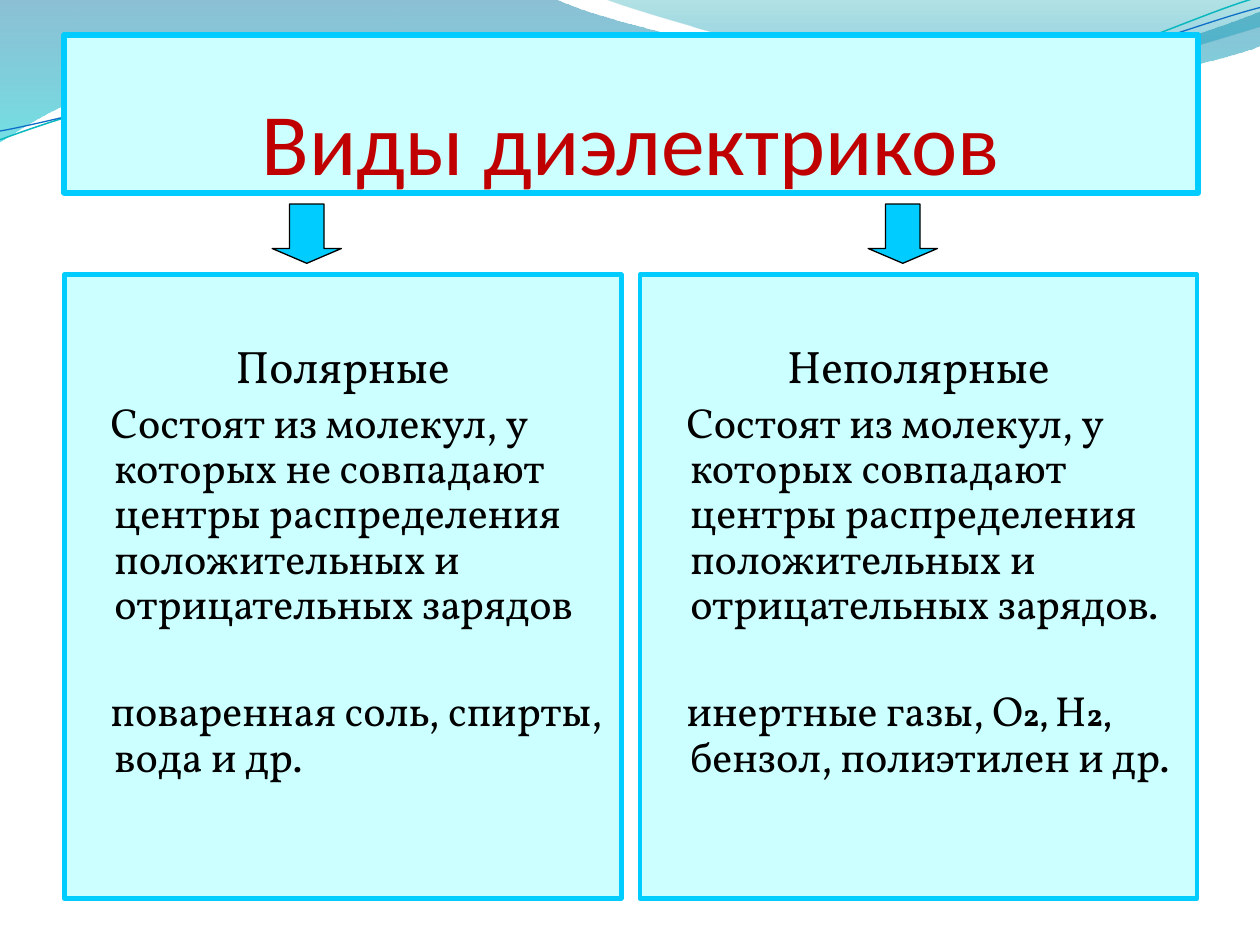
from lxml import etree
from pptx import Presentation
from pptx.dml.color import RGBColor
from pptx.enum import shapes, text
from pptx.oxml.ns import qn
from pptx.util import Inches, Pt


def rgb(value):
    return RGBColor.from_string(value)


def add_text(p, content, size=24, font="Vollkorn", color="000000", bold=False):
    r = p.add_run()
    r.text = content
    r.font.size, r.font.name, r.font.bold = Pt(size), font, bold
    r.font.color.rgb = rgb(color)


prs = Presentation()
prs.slide_width, prs.slide_height = Inches(10), Inches(7.5)
s = prs.slides.add_slide(prs.slide_layouts[6])

# Waves: segments of one point are lines, of three points are Bezier curves
waves = [
    ((0, 0),
     [[(4.4, -0.01)],
      [(4.76, 0.17), (6.64, 0.63), (7.58, 0.63)],
      [(8.53, 0.63), (9.58, 0.26), (10, 0.09)],
      [(10.01, 0.36)],
      [(9.83, 0.44), (8.7, 0.76), (7.46, 0.75)],
      [(6.22, 0.75), (3.82, 0.28), (2.57, 0.34)],
      [(1.29, 0.36), (0.46, 0.83), (-0.01, 1.13)]],
     [(0, "0074A1", 45), (1, "00C6CF", 55)], None),
    ((4.79, -0.01),
     [[(5.09, 0.11), (6.82, 0.62), (7.69, 0.65)],
      [(8.56, 0.69), (9.61, 0.32), (10, 0.21)],
      [(10, 0)]],
     [(0, "00A1A9", 30), (0.8, "008BBF", 45)], None),
    ((0, 1.11),
     [[(0.48, 0.93), (1.58, 0.57), (2.77, 0.52)],
      [(3.95, 0.47), (5.93, 0.89), (7.13, 0.8)],
      [(8.33, 0.71), (9.38, 0.15), (9.98, -0.02)]],
     None, ("0AB8BF", 0.85)),
    ((0, 1.04),
     [[(0.47, 0.96), (1.64, 0.61), (2.83, 0.56)],
      [(4.03, 0.51), (5.97, 0.84), (7.17, 0.75)],
      [(8.36, 0.67), (9.41, 0.21), (10, 0.06)]],
     None, ("0F6FC6", 0.75)),
]
for start, segments, stops, line in waves:
    builder = s.shapes.build_freeform(Inches(start[0]), Inches(start[1]))
    points = [(Inches(x), Inches(y)) for seg in segments for x, y in seg]
    builder.add_line_segments(points, close=stops is not None)
    sp = builder.convert_to_shape()
    sp.shadow.inherit = False
    # Join each three points of a curved segment into one Bezier curve
    steps = iter(list(sp.element.spPr.iter(qn("a:lnTo"))))
    for seg in segments:
        curve, *others = [next(steps) for _ in seg]
        if others:
            curve.tag = qn("a:cubicBezTo")
            for step in others:
                curve.append(step[0])
                step.getparent().remove(step)
    if stops:
        sp.line.fill.background()
        sp.fill.gradient()
        sp.fill.gradient_angle = 270
        elements = sp.element.spPr.iter(qn("a:gs"))
        for stop, gs, (pos, color, alpha) in zip(sp.fill.gradient_stops, elements, stops):
            stop.position, stop.color.rgb = pos, rgb(color)
            etree.SubElement(gs[0], qn("a:alpha"), val=str(alpha * 1000))
    else:
        sp.fill.background()
        sp.line.color.rgb, sp.line.width = rgb(line[0]), Pt(line[1])

# Title, two panels and the arrows pointing to them
RECT, ARROW = shapes.MSO_SHAPE.RECTANGLE, shapes.MSO_SHAPE.DOWN_ARROW
blocks = [
    (RECT, (0.51, 0.28, 9, 1.25), "CCFFFF", "00CCFF", 3.25),
    (RECT, (0.51, 2.18, 4.42, 4.95), "CCFFFF", "00CCFF", 2.75),
    (RECT, (5.08, 2.18, 4.42, 4.95), "CCFFFF", "00CCFF", 2.75),
    (ARROW, (2.16, 1.62, 0.55, 0.47), "00CCFF", "000000", 0.75),
    (ARROW, (6.89, 1.62, 0.55, 0.47), "00CCFF", "000000", 0.75),
]
drawn = []
for kind, box, fill, line, width in blocks:
    sp = s.shapes.add_shape(kind, *map(Inches, box))
    sp.shadow.inherit = False
    sp.fill.solid()
    sp.fill.fore_color.rgb = rgb(fill)
    sp.line.color.rgb, sp.line.width = rgb(line), Pt(width)
    if kind == ARROW:
        sp.adjustments[0], sp.adjustments[1] = 0.5, 0.25
    drawn.append(sp)
title, *panels = drawn[:3]

# Title text
tf = title.text_frame
tf.word_wrap = True
tf.vertical_anchor = text.MSO_ANCHOR.BOTTOM
tf.margin_left = tf.margin_right = tf.margin_bottom = 0
tf.paragraphs[0].alignment = text.PP_ALIGN.CENTER
add_text(tf.paragraphs[0], "Виды диэлектриков", size=50, font="Calibri", color="C00000")

# Panel text: heading, definition, examples
small = {"size": 18, "bold": True}
contents = [
    ("Полярные",
     "Состоят из молекул, у которых не совпадают центры распределения "
     "положительных и отрицательных зарядов",
     [("поваренная соль, спирты, вода и др.", {})]),
    ("Неполярные",
     "Состоят из молекул, у которых совпадают центры распределения "
     "положительных и отрицательных зарядов.",
     [("инертные газы, О", {}), ("2, ", small), ("Н", {}), ("2, ", small),
      ("бензол, полиэтилен и др.", {})]),
]
for sp, (heading, definition, examples) in zip(panels, contents):
    tf = sp.text_frame
    tf.word_wrap = True
    tf.vertical_anchor = text.MSO_ANCHOR.TOP
    tf.margin_top = Inches(0.55)
    rows = [([(heading, {"size": 26})], 0, text.PP_ALIGN.CENTER, -0.3),
            ([(definition, {})], 5, text.PP_ALIGN.LEFT, -0.03),
            (examples, 35.5, text.PP_ALIGN.LEFT, -0.03)]
    for i, (runs, before, align, indent) in enumerate(rows):
        p = tf.add_paragraph() if i else tf.paragraphs[0]
        p.alignment, p.line_spacing, p.space_before = align, 0.9, Pt(before)
        pPr = p._p.get_or_add_pPr()
        pPr.set("marL", str(Inches(0.3)))
        pPr.set("indent", str(Inches(indent)))
        for content, style in runs:
            add_text(p, content, **style)

prs.save("out.pptx")
